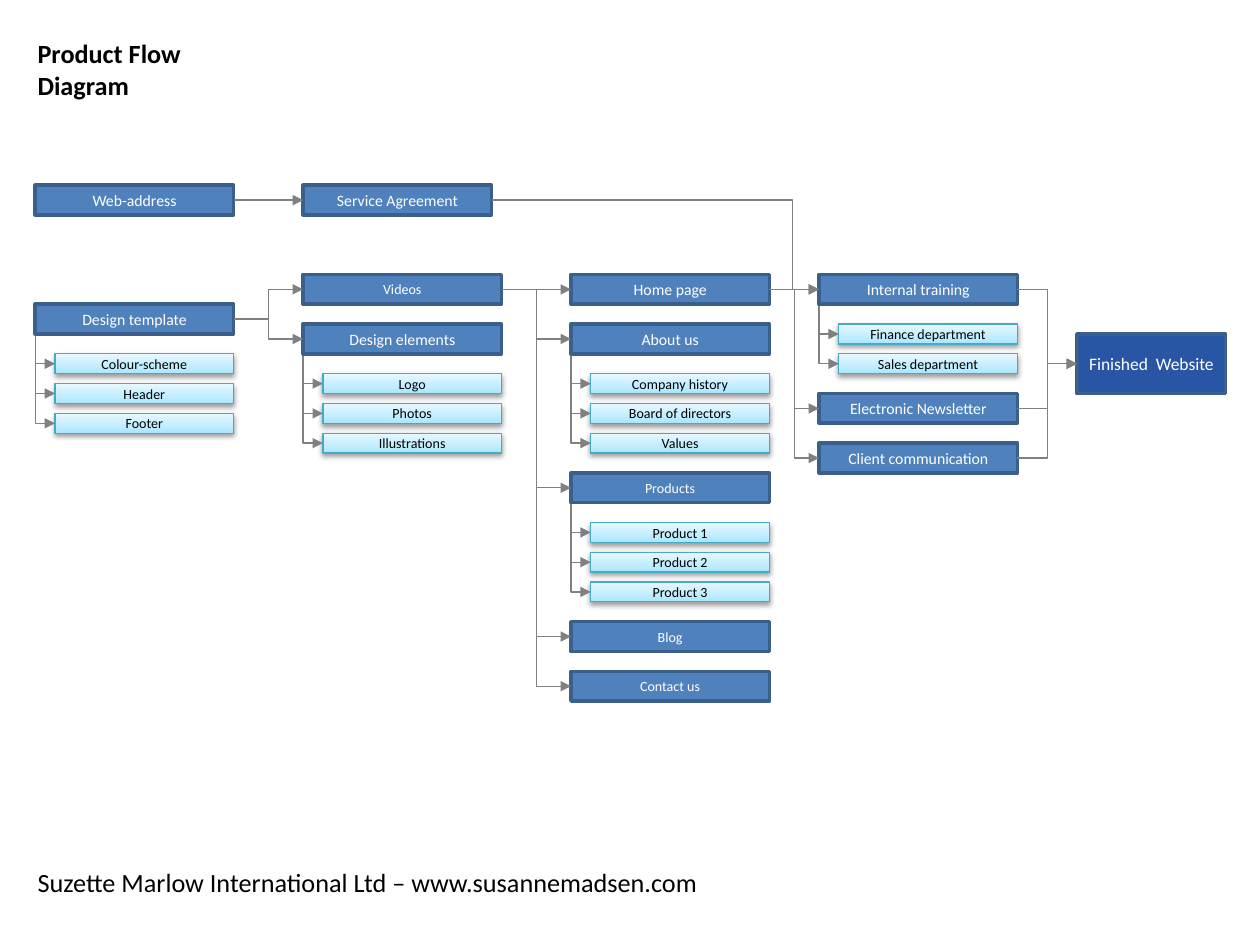
from dataclasses import dataclass

import pptx
import pptx.dml.color
import pptx.enum.shapes
import pptx.enum.text
import pptx.oxml
import pptx.oxml.ns
import pptx.util
from pptx.shapes.autoshape import Shape
from pptx.shapes.connector import Connector

COLOURS = {
    "task": "4F81BD", "task_line": "3A5F8C", "goal": "2955A5",
    "detail_line": "46AAC5", "detail_low": "A7E6FF", "detail_mid": "C1EDFF",
    "detail_high": "E7F8FF", "arrow": "808080", "light": "FFFFFF", "dark": "000000",
}
FONT = "Calibri"
A_NS = pptx.oxml.ns.nsdecls("a")

# The diagram sits on a square grid of 2 mm cells
CELL = pptx.util.Mm(2)
LEFT, TOP = pptx.util.Inches(0.28), pptx.util.Inches(1.47)
TASK_ROWS = 3
DETAIL_COLS, DETAIL_ROWS, DETAIL_INDENT = 18, 2, 2
FIRST_DETAIL, DETAIL_STEP, BRANCH_ROWS = 5, 3, 4
RIGHT_SIDE, LEFT_SIDE = 3, 1


@dataclass(frozen=True)
class Task:
    label: str
    col: int
    row: int
    size: int = 9
    cols: int = 20
    rows: int = TASK_ROWS
    fill: str = "task"
    details: tuple[str, ...] = ()


@dataclass(frozen=True)
class Flow:
    source: str
    targets: tuple[str, ...]
    bend: float = 0.5


@dataclass(frozen=True)
class Caption:
    text: str
    top: float      # share of the slide height
    width: float    # share of the slide width
    bold: bool = False


DESIGN, CONTENT, SITE, LAUNCH, GOAL = 0, 27, 54, 79, 105
TASKS = (
    Task("Web-address", DESIGN, 0),
    Task("Design template", DESIGN, 12, details=("Colour-scheme", "Header", "Footer")),
    Task("Service Agreement", CONTENT, 0, cols=19),
    Task("Videos", CONTENT, 9, size=8),
    Task("Design elements", CONTENT, 14, details=("Logo", "Photos", "Illustrations")),
    Task("Home page", SITE, 9),
    Task("About us", SITE, 14, details=("Company history", "Board of directors", "Values")),
    Task("Products", SITE, 29, size=8, details=("Product 1", "Product 2", "Product 3")),
    Task("Blog", SITE, 44, size=8),
    Task("Contact us", SITE, 49, size=8),
    Task("Internal training", LAUNCH, 9, details=("Finance department", "Sales department")),
    Task("Electronic Newsletter", LAUNCH, 21),
    Task("Client communication", LAUNCH, 26),
    Task("Finished  Website", GOAL, 15, size=10, cols=15, rows=6, fill="goal"),
)
FLOWS = (
    Flow("Web-address", ("Service Agreement",)),
    Flow("Design template", ("Videos", "Design elements")),
    Flow("Videos", ("Home page", "About us", "Products", "Blog", "Contact us")),
    Flow("Home page", ("Internal training", "Electronic Newsletter", "Client communication")),
    Flow("Service Agreement", ("Internal training",), bend=0.92),
    Flow("Internal training", ("Finished  Website",)),
    Flow("Electronic Newsletter", ("Finished  Website",)),
    Flow("Client communication", ("Finished  Website",)),
)
CAPTIONS = (
    Caption("Product Flow Diagram", 0.033, 0.21, bold=True),
    Caption("Suzette Marlow International Ltd – www.susannemadsen.com", 0.91, 0.56),
)


def colour(name: str) -> pptx.dml.color.RGBColor:
    return pptx.dml.color.RGBColor.from_string(COLOURS[name])


def x_at(col: float) -> int:
    return int(LEFT + col * CELL)


def y_at(row: float) -> int:
    return int(TOP + row * CELL)


def add_run(shape: Shape, text: str, size: int, ink: str, bold: bool = False) -> None:
    run = shape.text_frame.paragraphs[0].add_run()
    run.text = text
    run.font.name, run.font.size, run.font.bold = FONT, pptx.util.Pt(size), bold
    run.font.color.rgb = colour(ink)


def draw_box(slide, label: str, col: int, row: int, cols: int, rows: int,
             size: int, ink: str, line: str, line_pt: float) -> Shape:
    box = slide.shapes.add_shape(pptx.enum.shapes.MSO_SHAPE.RECTANGLE,
                                 x_at(col), y_at(row), cols * CELL, rows * CELL)
    box.shadow.inherit = False
    box.line.color.rgb = colour(line)
    box.line.width = pptx.util.Pt(line_pt)
    frame = box.text_frame
    frame.word_wrap = True
    frame.vertical_anchor = pptx.enum.text.MSO_ANCHOR.MIDDLE
    frame.margin_left = frame.margin_right = pptx.util.Inches(0.05)
    frame.margin_top = frame.margin_bottom = 0
    frame.paragraphs[0].alignment = pptx.enum.text.PP_ALIGN.CENTER
    add_run(box, label, size, ink)
    return box


def draw_detail(slide, label: str, col: int, row: int) -> None:
    detail = draw_box(slide, label, col, row, DETAIL_COLS, DETAIL_ROWS,
                      8, "dark", "detail_line", 0.75)
    # Three-stop gradient, darkest at the bottom
    stops = "".join(
        f'<a:gs pos="{share * 1000}"><a:srgbClr val="{COLOURS[name]}"/></a:gs>'
        for share, name in ((0, "detail_low"), (35, "detail_mid"), (100, "detail_high")))
    properties = detail.element.spPr
    properties.find(pptx.oxml.ns.qn("a:prstGeom")).addnext(pptx.oxml.parse_xml(
        f'<a:gradFill {A_NS} rotWithShape="1"><a:gsLst>{stops}</a:gsLst>'
        '<a:lin ang="16200000" scaled="1"/></a:gradFill>'))
    # Soft shadow straight below
    properties.find(pptx.oxml.ns.qn("a:effectLst")).append(pptx.oxml.parse_xml(
        f'<a:outerShdw {A_NS} blurRad="{pptx.util.Pt(3.1)}" dist="{pptx.util.Pt(1.6)}" '
        f'dir="5400000" rotWithShape="0"><a:srgbClr val="{COLOURS["dark"]}">'
        '<a:alpha val="38000"/></a:srgbClr></a:outerShdw>'))


def draw_elbow(slide, left: int, top: int, right: int, bottom: int) -> Connector:
    elbow = slide.shapes.add_connector(pptx.enum.shapes.MSO_CONNECTOR.ELBOW,
                                       left, top, right, bottom)
    elbow.line.color.rgb = colour("arrow")
    elbow.line.width = pptx.util.Pt(0.75)
    properties = elbow.element.spPr
    properties.find(pptx.oxml.ns.qn("a:ln")).append(
        pptx.oxml.parse_xml(f'<a:tailEnd {A_NS} type="triangle"/>'))
    properties.append(pptx.oxml.parse_xml(f"<a:effectLst {A_NS}/>"))
    return elbow


def draw_branch(slide, col: int, row: float) -> None:
    """Run down from the task's left edge, then right into a detail at this row."""
    mid_col, mid_row = col + DETAIL_INDENT / 2, row - BRANCH_ROWS / 2
    half_length, half_depth = BRANCH_ROWS / 2, DETAIL_INDENT / 2
    branch = draw_elbow(slide, x_at(mid_col - half_length), y_at(mid_row - half_depth),
                        x_at(mid_col + half_length), y_at(mid_row + half_depth))
    properties = branch.element.spPr
    properties.find(pptx.oxml.ns.qn("a:prstGeom")).set("prst", "bentConnector2")
    frame = properties.find(pptx.oxml.ns.qn("a:xfrm"))
    frame.set("rot", "16200000")
    frame.set("flipH", "1")


def draw_task(slide, task: Task) -> Shape:
    # Details and branches first, so that the task covers the branch starts
    for index, label in enumerate(task.details):
        row = task.row + FIRST_DETAIL + index * DETAIL_STEP
        draw_detail(slide, label, task.col + DETAIL_INDENT, row)
        draw_branch(slide, task.col, row + DETAIL_ROWS / 2)
    box = draw_box(slide, task.label, task.col, task.row, task.cols, task.rows,
                   task.size, "light", "task_line", 2)
    box.fill.solid()
    box.fill.fore_color.rgb = colour(task.fill)
    return box


def draw_flow(slide, flow: Flow, boxes: dict[str, Shape]) -> None:
    for target in flow.targets:
        arrow = draw_elbow(slide, 0, 0, 0, 0)
        arrow.begin_connect(boxes[flow.source], RIGHT_SIDE)
        arrow.end_connect(boxes[target], LEFT_SIDE)
        geometry = arrow.element.spPr.find(pptx.oxml.ns.qn("a:prstGeom"))
        geometry.get_or_add_avLst().append(pptx.oxml.parse_xml(
            f'<a:gd {A_NS} name="adj1" fmla="val {round(flow.bend * 100000)}"/>'))


def draw_caption(slide, caption: Caption, width: int, height: int) -> None:
    box = slide.shapes.add_textbox(int(0.02 * width), int(caption.top * height),
                                   int(caption.width * width), int(0.047 * height))
    box.text_frame.word_wrap = False
    add_run(box, caption.text, 15, "dark", caption.bold)


def main() -> None:
    deck = pptx.Presentation()
    deck.slide_width, deck.slide_height = pptx.util.Inches(10), pptx.util.Inches(7.5)
    slide = deck.slides.add_slide(deck.slide_layouts[6])
    boxes = {task.label: draw_task(slide, task) for task in TASKS}
    for flow in FLOWS:
        draw_flow(slide, flow, boxes)
    for caption in CAPTIONS:
        draw_caption(slide, caption, deck.slide_width, deck.slide_height)
    deck.save("out.pptx")


if __name__ == "__main__":
    main()
